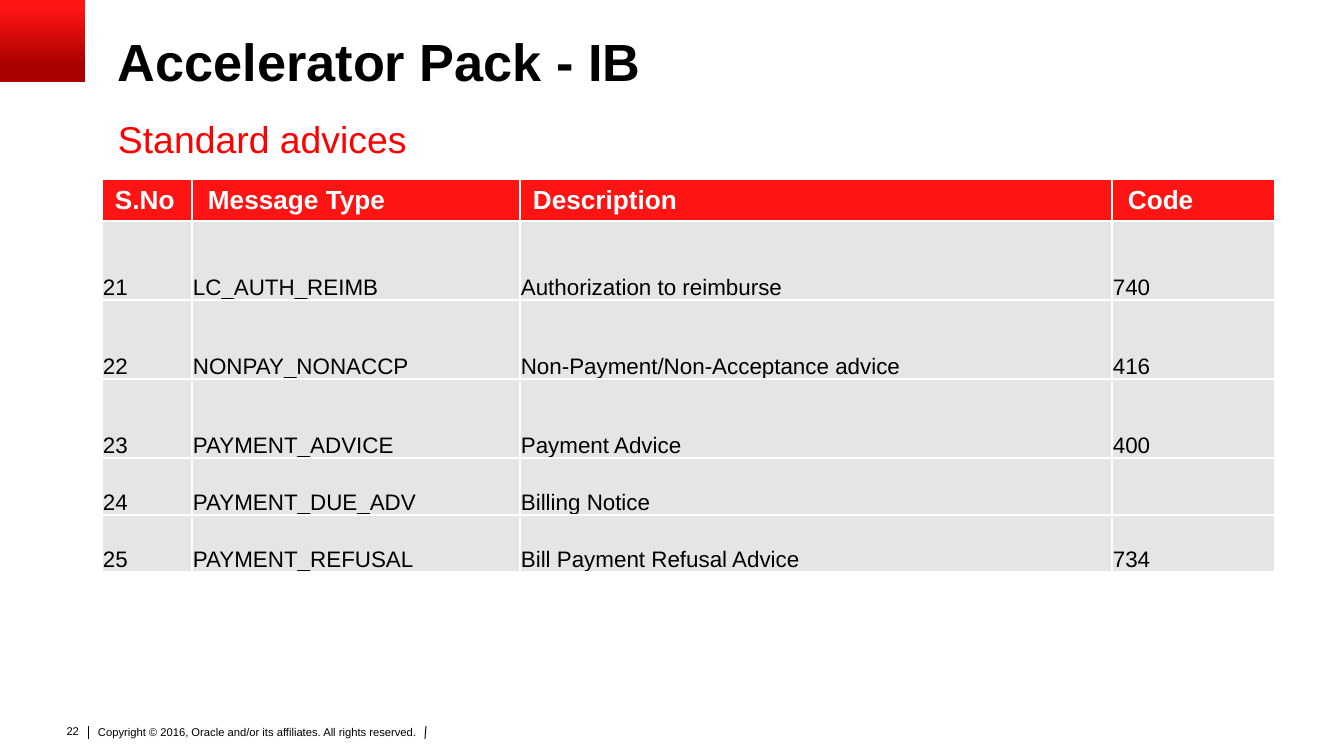
from lxml.etree import SubElement
from pptx import Presentation
from pptx.dml.color import RGBColor
from pptx.enum.shapes import MSO_CONNECTOR, MSO_SHAPE
from pptx.enum.text import MSO_ANCHOR, PP_ALIGN
from pptx.oxml.ns import qn
from pptx.util import Emu, Pt

SCALE = 914400 / 134.4
COLOURS = {"black": "000000", "white": "FFFFFF", "red": "FF1414", "dark red": "AA0000",
           "subtitle": "FF0000", "grey": "E5E5E5"}
COLUMNS = [90, 328, 592, 163]
ROWS = [42, 79, 79, 79, 57, 57]
HEADINGS = [("S.No", 0), ("Message Type", 3), ("Description", 0), ("Code", 3)]
ADVICES = [
    ("21", "LC_AUTH_REIMB", "Authorization to reimburse", "740"),
    ("22", "NONPAY_NONACCP", "Non-Payment/Non-Acceptance advice", "416"),
    ("23", "PAYMENT_ADVICE", "Payment Advice", "400"),
    ("24", "PAYMENT_DUE_ADV", "Billing Notice", ""),
    ("25", "PAYMENT_REFUSAL", "Bill Payment Refusal Advice", "734"),
]


def px(length):
    """Turn px into EMU."""
    return Emu(round(length * SCALE))


def colour(name):
    """Look up a named colour."""
    return RGBColor.from_string(COLOURS[name])


def set_margins(holder, left, top, right, bottom):
    """Set the four inner margins of a text frame or cell."""
    holder.margin_left, holder.margin_top = px(left), px(top)
    holder.margin_right, holder.margin_bottom = px(right), px(bottom)


def add_span(para, text, size, tint, bold=False):
    """Add one run of Arial text to a paragraph."""
    span = para.add_run()
    span.text = text
    span.font.name, span.font.size, span.font.bold = "Arial", Pt(size), bold
    span.font.color.rgb = colour(tint)


def add_text(page, box, text, size, tint="black", bold=False, margins=(0, 0, 0, 0), wrap=True):
    """Place a one-line text box and return its paragraph."""
    frame = page.shapes.add_textbox(*map(px, box)).text_frame
    frame.word_wrap = wrap
    set_margins(frame, *margins)
    para = frame.paragraphs[0]
    add_span(para, text, size, tint, bold)
    return para


def add_corner(page, box):
    """Place the gradient block in the corner."""
    block = page.shapes.add_shape(MSO_SHAPE.RECTANGLE, *map(px, box))
    block.shadow.inherit = False
    block.line.fill.background()
    block.fill.gradient()
    block.fill.gradient_angle = 90
    stops = [(0.2, "dark red"), (0.9, "red")]
    for stop, (position, tint) in zip(block.fill.gradient_stops, stops):
        stop.position = position
        stop.color.rgb = colour(tint)


def add_heading(page, box):
    """Place the title and the subtitle below it."""
    left, top, width, height = box
    title = add_text(page, (left, top, width, 80), "Accelerator Pack - IB", 28, bold=True)
    title.line_spacing = 0.9
    add_text(page, (left, top + 80, width, height - 80), "Standard advices", 20, "subtitle")


def style_cell(cell, fill):
    """Give a cell white borders and a solid fill."""
    properties = cell._tc.get_or_add_tcPr()
    for side in ("a:lnL", "a:lnR", "a:lnT", "a:lnB"):
        border = SubElement(properties, qn(side), w=str(Pt(1.5)))
        solid = SubElement(border, qn("a:solidFill"))
        SubElement(solid, qn("a:srgbClr"), val=COLOURS["white"])
    cell.fill.solid()
    cell.fill.fore_color.rgb = colour(fill)


def add_advices(page, box):
    """Place the table of standard advices."""
    table = page.shapes.add_table(len(ROWS), len(COLUMNS), *map(px, box)).table
    for column, width in zip(table.columns, COLUMNS):
        column.width = px(width)
    for row, height in zip(table.rows, ROWS):
        row.height = px(height)
    for cell, (text, indent) in zip(table.rows[0].cells, HEADINGS):
        style_cell(cell, "red")
        set_margins(cell, 13, 5, 13, 5)
        cell.vertical_anchor = MSO_ANCHOR.MIDDLE
        para = cell.text_frame.paragraphs[0]
        para._p.get_or_add_pPr().set("marL", str(px(indent)))
        add_span(para, text, 14, "white", True)
    for index, advice in enumerate(ADVICES, 1):
        for cell, text in zip(table.rows[index].cells, advice):
            style_cell(cell, "grey")
            set_margins(cell, 1, 1, 1, 0)
            cell.vertical_anchor = MSO_ANCHOR.BOTTOM
            if text:
                add_span(cell.text_frame.paragraphs[0], text, 12, "black")


def add_footer(page, box):
    """Place the page number, the copyright line and its two rules."""
    left, top, width, height = box
    number = add_text(page, (left, top, 40, 27), "22", 6, margins=(13, 7, 13, 7), wrap=False)
    number.alignment = PP_ALIGN.RIGHT
    add_text(page, (left + 41, top + 4, width - 41, height - 4),
             "Copyright © 2016, Oracle and/or its affiliates. All rights reserved.", 6,
             margins=(5, 3, 5, 3))
    for start, end in ((36, 36), (374, 373)):
        rule = page.shapes.add_connector(MSO_CONNECTOR.STRAIGHT, px(left + start), px(top + 8),
                                         px(left + end), px(top + 21))
        rule.line.color.rgb = colour("black")
        rule.line.width = Pt(0.5)
        SubElement(rule._element.spPr, qn("a:effectLst"))


def main():
    """Build and save the slide."""
    deck = Presentation()
    deck.slide_width, deck.slide_height = px(1344), px(756)
    page = deck.slides.add_slide(deck.slide_layouts[6])
    add_footer(page, (52, 718, 409, 36))
    add_corner(page, (0, 0, 85, 82))
    add_heading(page, (118, 36, 1210, 124))
    add_advices(page, (102, 179, sum(COLUMNS), sum(ROWS)))
    deck.save("out.pptx")


if __name__ == "__main__":
    main()
